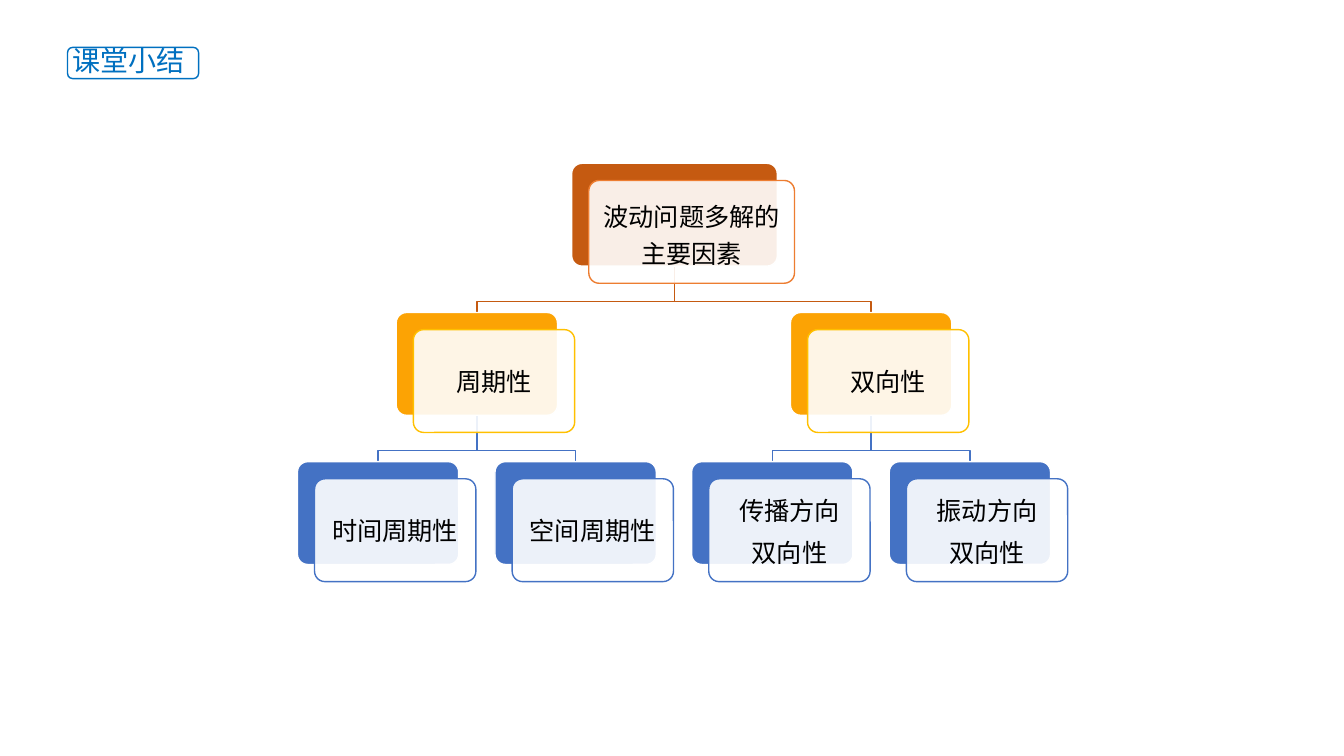
"""Build a lesson summary slide with a three-level tree of wave problem factors."""
import pptx
import pptx.util
import pptx.dml.color
import pptx.enum.shapes
import pptx.enum.text
import pptx.oxml
import pptx.oxml.ns

PX = 9144
FONT = "Noto Sans CJK SC"
HEX = {"rust": "C55A11", "orange": "ED7D31", "amber": "FCA304", "gold": "FFC000",
       "blue": "4472C4", "sky": "0070C0", "white": "FFFFFF", "black": "000000"}
RGB = {name: pptx.dml.color.RGBColor.from_string(code) for name, code in HEX.items()}
ROUND = pptx.enum.shapes.MSO_SHAPE.ROUNDED_RECTANGLE


def add_box(left, top, wide, high, fill, line):
    box = slide.shapes.add_shape(ROUND, left * PX, top * PX, wide * PX, high * PX)
    box.shadow.inherit = False
    if fill:
        box.fill.solid()
        box.fill.fore_color.rgb = RGB[fill]
    else:
        box.fill.background()
    box.line.color.rgb = RGB[line]
    box.line.width = pptx.util.Pt(1)
    return box


def add_text(para, text, size, color):
    run = para.add_run()
    run.text = text
    run.font.size = pptx.util.Pt(size)
    run.font.name = FONT
    run.font.color.rgb = RGB[color]
    east = pptx.oxml.parse_xml(
        f'<a:ea {pptx.oxml.ns.nsdecls("a")} typeface="{FONT}"/>')
    run.font._element.find(pptx.oxml.ns.qn("a:latin")).addnext(east)


deck = pptx.Presentation()
deck.slide_width = 1333 * PX
deck.slide_height = 750 * PX
slide = deck.slides.add_slide(deck.slide_layouts[6])

HIGH, SHIFT, DROP = 102, 17, 11
TOPS = [162, 310, 458]
WIDES = [204, 160, 160]
FILLS = ["rust", "amber", "blue"]
EDGES = ["orange", "gold", "blue"]

nodes = [
    (0, 669, None, ["波动问题多解的主要因素"], 1.2),
    (1, 473, 669, ["周期性"], 1),
    (2, 375, 473, ["时间周期性"], 1),
    (2, 571, 473, ["空间周期性"], 1),
    (1, 864, 669, ["双向性"], 1),
    (2, 766, 864, ["传播方向", "双向性"], 1.1),
    (2, 962, 864, ["振动方向", "双向性"], 1.1),
]

for level, mid, root, lines, space in nodes:
    if root is None:
        continue
    top = TOPS[level]
    base = TOPS[level - 1] + HIGH
    pen = slide.shapes.build_freeform(root, base, scale=PX)
    pen.add_line_segments(
        [(root, top - DROP), (mid, top - DROP), (mid, top)], close=False)
    link = pen.convert_to_shape()
    link.shadow.inherit = False
    link.fill.background()
    link.line.color.rgb = RGB["rust" if level == 1 else "blue"]
    link.line.width = pptx.util.Pt(1)

for level, mid, root, lines, space in nodes:
    wide, top = WIDES[level], TOPS[level]
    left = mid - wide // 2
    back = add_box(left, top, wide, HIGH, FILLS[level], "white")
    card = add_box(left + SHIFT, top + SHIFT, wide, HIGH, "white", EDGES[level])
    back.adjustments[0] = card.adjustments[0] = 0.1
    tint = card.fill._xPr.find(".//" + pptx.oxml.ns.qn("a:srgbClr"))
    tint.append(pptx.oxml.parse_xml(
        f'<a:alpha {pptx.oxml.ns.nsdecls("a")} val="90000"/>'))
    frame = card.text_frame
    frame.word_wrap = True
    frame.vertical_anchor = pptx.enum.text.MSO_ANCHOR.MIDDLE
    frame.margin_left = frame.margin_right = 7 * PX
    frame.margin_top = frame.margin_bottom = 7 * PX
    for row, text in enumerate(lines):
        para = frame.add_paragraph() if row else frame.paragraphs[0]
        para.alignment = pptx.enum.text.PP_ALIGN.CENTER
        para.line_spacing = space
        if row < len(lines) - 1:
            para.space_after = pptx.util.Pt(6.3)
        add_text(para, text, 18, "black")

title = slide.shapes.add_textbox(67 * PX, 41 * PX, 130 * PX, 39 * PX)
frame = title.text_frame
frame.word_wrap = True
frame.auto_size = pptx.enum.text.MSO_AUTO_SIZE.SHAPE_TO_FIT_TEXT
frame.margin_left = frame.margin_right = 5 * PX
frame.margin_top = frame.margin_bottom = 2 * PX
add_text(frame.paragraphs[0], "课堂小结", 20, "sky")
add_box(67, 47, 130, 31, None, "sky")

deck.save("out.pptx")
